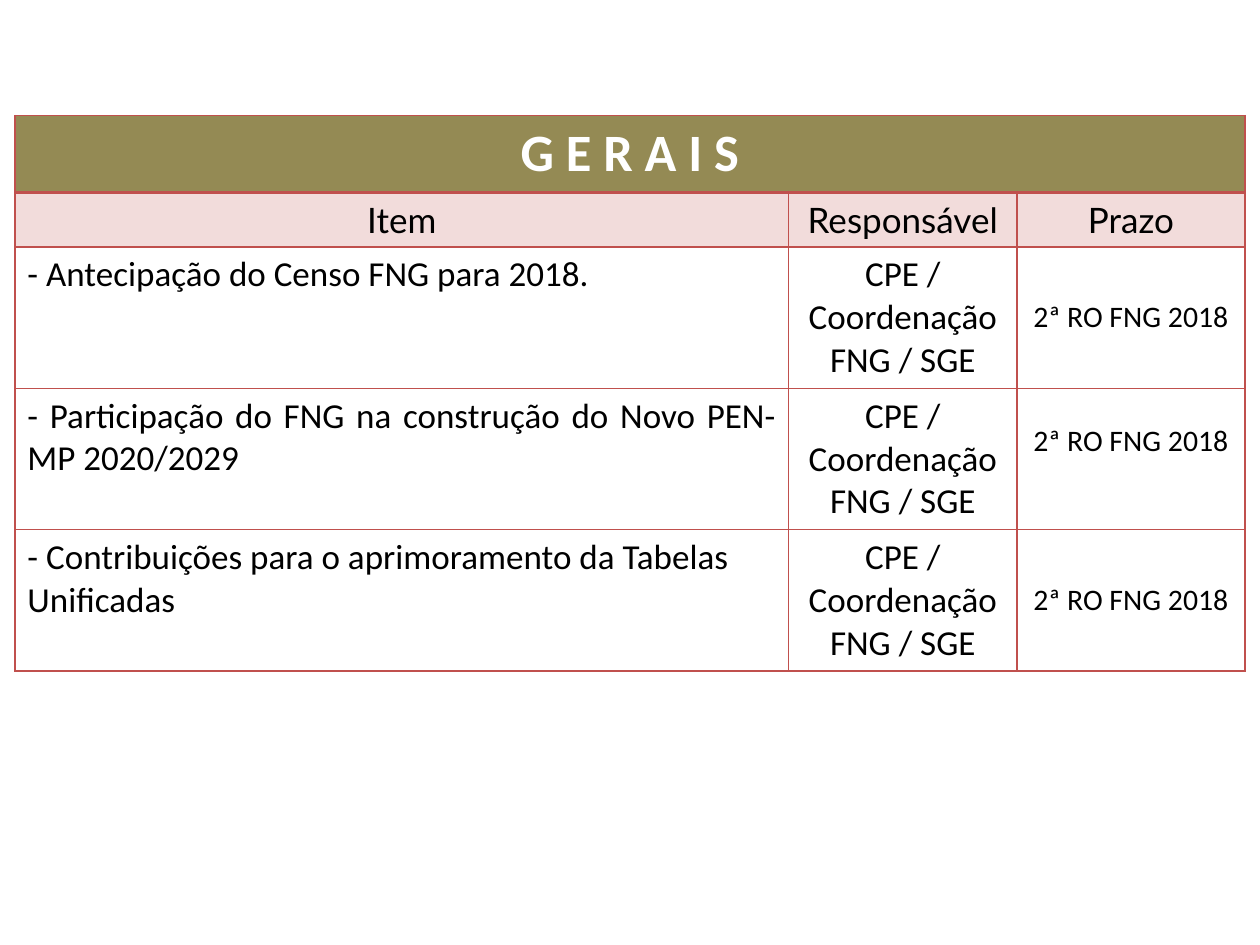
from lxml.etree import SubElement
from pptx import Presentation
from pptx.dml.color import RGBColor
from pptx.enum.text import MSO_ANCHOR, PP_ALIGN
from pptx.oxml.ns import qn
from pptx.util import Cm, Pt

WHITE = RGBColor(0xFF, 0xFF, 0xFF)
BLACK = RGBColor(0x00, 0x00, 0x00)
OLIVE = RGBColor(0x94, 0x8A, 0x54)
RED = RGBColor(0xC0, 0x50, 0x4D)

BANNER = {"name": "Calibri", "size": Pt(30), "bold": True}
HEADING = {"name": "Lato", "size": Pt(20), "bold": False}
BODY = {"name": "Calibri", "size": Pt(20), "bold": False}
DEADLINE = {**BODY, "size": Pt(17)}


class SlideBuilder:
    def __init__(self, prs):
        self.s = prs.slides.add_slide(prs.slide_layouts[6])
        self.line = RED

    def table(self, left, top, widths, heights):
        frame = self.s.shapes.add_table(
            len(heights), len(widths), Cm(left), Cm(top),
            Cm(sum(widths)), Cm(sum(heights)))
        table = frame.table
        for column, width in zip(table.columns, widths):
            column.width = Cm(width)
        for row, height in zip(table.rows, heights):
            row.height = Cm(height)
        return table

    def borders(self, cell, **widths):
        tcPr = cell._tc.get_or_add_tcPr()
        for side in ("lnL", "lnR", "lnT", "lnB"):
            ln = SubElement(tcPr, qn(f"a:{side}"), w=str(Pt(widths.get(side, 1))))
            fill = SubElement(ln, qn("a:solidFill"))
            SubElement(fill, qn("a:srgbClr"), val=str(self.line))

    def fill(self, cell, color=None, opacity=100):
        if color is None:
            cell.fill.background()
            return
        cell.fill.solid()
        cell.fill.fore_color.rgb = color
        if opacity < 100:
            clr = cell._tc.tcPr.find(".//" + qn("a:srgbClr") + f"[@val='{color}']/..[@w]")
            clr = cell._tc.tcPr.find(qn("a:solidFill")).find(qn("a:srgbClr"))
            SubElement(clr, qn("a:alpha"), val=str(opacity * 1000))

    def text(self, cell, text, style, align=PP_ALIGN.CENTER,
             anchor=MSO_ANCHOR.TOP, color=BLACK):
        cell.vertical_anchor = anchor
        p = cell.text_frame.paragraphs[0]
        p.alignment = align
        r = p.add_run()
        r.text = text
        for key, value in style.items():
            setattr(r.font, key, value)
        r.font.color.rgb = color


def main():
    prs = Presentation()
    prs.slide_width, prs.slide_height = Cm(25.4), Cm(19.05)
    b = SlideBuilder(prs)
    table = b.table(0.3, 2.33, [15.6, 4.6, 4.6], [1.5, 1.1, 2.8, 2.8, 2.8])

    # Borders, with a heavier rule under the banner
    rules = {0: {"lnB": 2}, 1: {"lnT": 2}}
    for i, row in enumerate(table.rows):
        for cell in row.cells:
            b.borders(cell, **rules.get(i, {}))
            b.fill(cell)

    # Banner
    banner = table.cell(0, 0)
    banner.merge(table.cell(0, 2))
    b.fill(banner, OLIVE)
    b.text(banner, "G E R A I S", BANNER, color=WHITE)

    # Column headings
    for j, heading in enumerate(["Item", "Responsável", "Prazo"]):
        b.fill(table.cell(1, j), RED, opacity=20)
        b.text(table.cell(1, j), heading, HEADING)

    # Items, each with the same owner and deadline
    items = [
        ("- Antecipação do Censo FNG para 2018.", PP_ALIGN.LEFT),
        ("- Participação do FNG na construção do Novo PEN-MP 2020/2029", PP_ALIGN.JUSTIFY),
        ("- Contribuições para o aprimoramento da Tabelas Unificadas", PP_ALIGN.LEFT),
    ]
    for i, (item, align) in enumerate(items, start=2):
        b.text(table.cell(i, 0), item, BODY, align)
        b.text(table.cell(i, 1), "CPE / Coordenação FNG / SGE", BODY, anchor=MSO_ANCHOR.MIDDLE)
        b.text(table.cell(i, 2), "2ª RO FNG 2018", DEADLINE, anchor=MSO_ANCHOR.MIDDLE)

    # The second deadline sits a little higher
    table.cell(3, 2).margin_bottom = Cm(0.86)

    prs.save("out.pptx")


if __name__ == "__main__":
    main()
